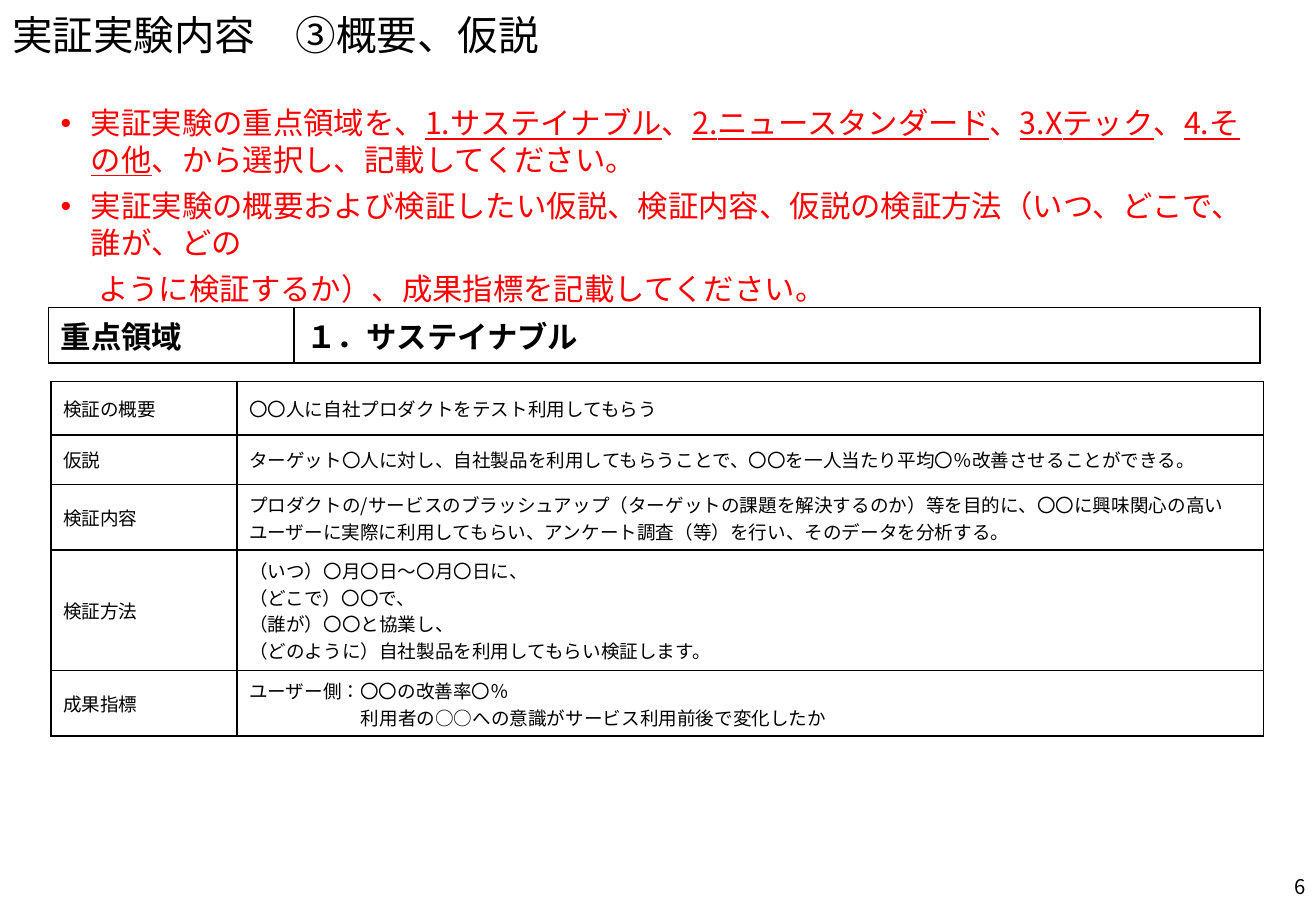
from lxml import etree
from pptx import Presentation
from pptx.dml.color import RGBColor
from pptx.enum import lang, text
from pptx.oxml import ns
from pptx.util import Inches, Pt

FONT = "Noto Sans CJK JP"
BLACK, RED = "000000", "FF0000"

TITLE = "実証実験内容　③概要、仮説"
PAGE = "6"
# (margin, first-line indent, bullet, [(text, underlined)])
GUIDE = [
    (0.25, -0.25, "•", [
        ("実証実験の重点領域を、", False), ("1.サステイナブル", True), ("、", False),
        ("2.ニュースタンダード", True), ("、", False), ("3.Xテック", True), ("、", False),
        ("4.その他", True), ("、から選択し、記載してください。", False)]),
    (0.25, -0.25, "•", [
        ("実証実験の概要および検証したい仮説、検証内容、仮説の検証方法（いつ、どこで、誰が、どの", False)]),
    (0.31, 0, None, [("ように検証するか）、成果指標を記載してください。", False)]),
]
FOCUS = [("重点領域", "１．サステイナブル")]
PLAN = [
    ("検証の概要", "〇〇人に自社プロダクトをテスト利用してもらう"),
    ("仮説", "ターゲット〇人に対し、自社製品を利用してもらうことで、〇〇を一人当たり平均〇％改善させることができる。"),
    ("検証内容", "プロダクトの/サービスのブラッシュアップ（ターゲットの課題を解決するのか）等を目的に、"
               "〇〇に興味関心の高いユーザーに実際に利用してもらい、アンケート調査（等）を行い、そのデータを分析する。"),
    ("検証方法", "（いつ）〇月〇日～〇月〇日に、\n（どこで）〇〇で、\n（誰が）〇〇と協業し、\n"
               "（どのように）自社製品を利用してもらい検証します。"),
    ("成果指標", "ユーザー側：〇〇の改善率〇％\n利用者の○○への意識がサービス利用前後で変化したか"),
]


def rgb(color):
    return RGBColor.from_string(color)


def style(p, size, color=BLACK, font=FONT, bold=False):
    for r in p.runs:
        r.font.size, r.font.bold, r.font.name = Pt(size), bold, font
        r.font.language_id = lang.MSO_LANGUAGE_ID.JAPANESE
        r.font.color.rgb = rgb(color)
        ea = etree.SubElement(r.font._element, ns.qn("a:ea"))
        ea.set("typeface", FONT)


def indent(p, margin, first=0, bullet=None):
    pPr = p._p.get_or_add_pPr()
    pPr.set("marL", str(Inches(margin)))
    pPr.set("indent", str(Inches(first)))
    if bullet:
        etree.SubElement(pPr, ns.qn("a:buFont")).set("typeface", "Arial")
        etree.SubElement(pPr, ns.qn("a:buChar")).set("char", bullet)


def border(cell, color=BLACK, width=1):
    tcPr = cell._tc.get_or_add_tcPr()
    for i, side in enumerate(("lnL", "lnR", "lnT", "lnB")):
        ln = etree.Element(ns.qn(f"a:{side}"), w=str(Pt(width)))
        fill = etree.SubElement(ln, ns.qn("a:solidFill"))
        etree.SubElement(fill, ns.qn("a:srgbClr")).set("val", color)
        tcPr.insert(i, ln)


def add_grid(slide, rows, left, top, widths, heights, anchor, **look):
    """Add a plain black-ruled table and return it."""
    table = slide.shapes.add_table(
        len(rows), len(widths), Inches(left), Inches(top),
        Inches(sum(widths)), Inches(sum(heights))).table
    table.first_row = table.horz_banding = False
    for col, width in zip(table.columns, widths):
        col.width = Inches(width)
    for row, height, values in zip(table.rows, heights, rows):
        row.height = Inches(height)
        for cell, value in zip(row.cells, values):
            cell.text_frame.text = value
            cell.vertical_anchor = anchor
            cell.fill.background()
            border(cell)
            for p in cell.text_frame.paragraphs:
                style(p, **look)
    return table


def add_text(slide, left, top, width, height):
    tf = slide.shapes.add_textbox(
        Inches(left), Inches(top), Inches(width), Inches(height)).text_frame
    tf.word_wrap = True
    return tf


prs = Presentation()
prs.slide_width, prs.slide_height = Inches(10.83), Inches(7.5)
s = prs.slides.add_slide(prs.slide_layouts[5])

title = s.shapes.title
title.left, title.top, title.width, title.height = 0, 0, Inches(9.34), Inches(0.61)
title.text_frame.text = TITLE
title.text_frame.vertical_anchor = text.MSO_ANCHOR.MIDDLE
p = title.text_frame.paragraphs[0]
p.alignment, p.line_spacing = text.PP_ALIGN.LEFT, 0.9
style(p, 24)

tf = add_text(s, 0.4, 0.81, 10.01, 2.52)
for i, (margin, first, bullet, parts) in enumerate(GUIDE):
    p = tf.add_paragraph() if i else tf.paragraphs[0]
    p.space_before, p.line_spacing = Pt(6), 1.0
    indent(p, margin, first, bullet)
    for words, underlined in parts:
        r = p.add_run()
        r.text, r.font.underline = words, underlined
    style(p, 18, RED)

add_grid(s, FOCUS, 0.4, 2.53, [2.02, 7.95], [0.46], text.MSO_ANCHOR.TOP,
         size=18, font="Calibri", bold=True)
plan = add_grid(s, PLAN, 0.42, 3.14, [1.53, 8.45], [0.44, 0.41, 0.54, 0.99, 0.54],
                text.MSO_ANCHOR.MIDDLE, size=11)
indent(plan.cell(len(PLAN) - 1, 1).text_frame.paragraphs[1], 0.92)

tf = add_text(s, 8.4, 7.1, 2.44, 0.4)
tf.text = PAGE
tf.vertical_anchor = text.MSO_ANCHOR.MIDDLE
p = tf.paragraphs[0]
p.alignment = text.PP_ALIGN.RIGHT
style(p, 12)

prs.save("out.pptx")
